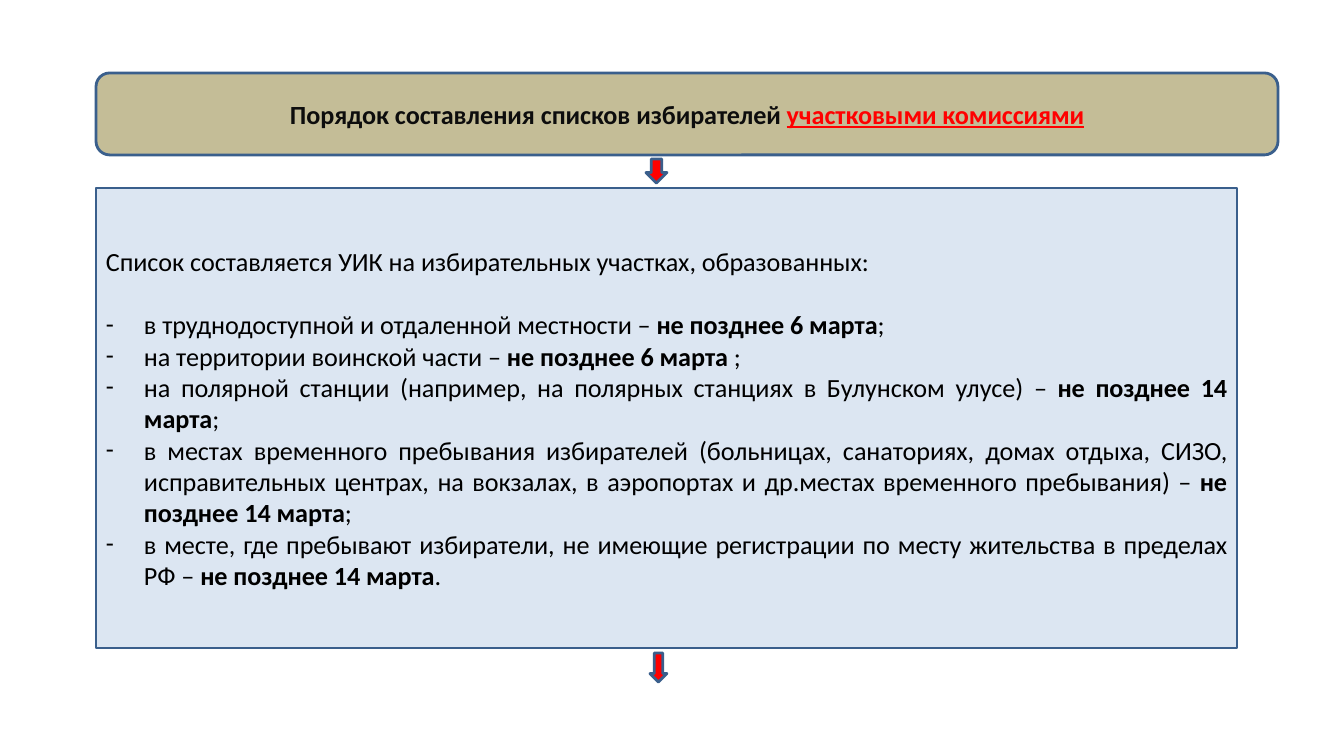
from dataclasses import dataclass
from lxml.etree import SubElement
from pptx import Presentation
from pptx.dml.color import RGBColor as Rgb
from pptx.enum.shapes import MSO_SHAPE as Shape
from pptx.enum.text import MSO_ANCHOR as Anchor, MSO_AUTO_SIZE as Fit, PP_ALIGN as Align
from pptx.oxml.ns import qn
from pptx.util import Pt

SCALE = 914400 / 100.8


def px(*nums):
    return [round(n * SCALE) for n in nums]


@dataclass(frozen=True)
class Theme:
    font: str = "Calibri"
    size: float = 18.67
    edge: float = 2
    gap: float = 23
    line: str = "3A5F8C"
    head: str = "C4BD97"
    body: str = "DCE6F2"
    red: str = "FF0000"
    dark: str = "0D0D0D"
    black: str = "000000"


class Board:
    def __init__(self, slide, theme):
        self.slide = slide
        self.theme = theme

    def box(self, kind, place, fill):
        shape = self.slide.shapes.add_shape(kind, *px(*place))
        shape.shadow.inherit = False
        shape.fill.solid()
        shape.fill.fore_color.rgb = Rgb.from_string(fill)
        shape.line.color.rgb = Rgb.from_string(self.theme.line)
        shape.line.width = Pt(self.theme.edge)
        return shape

    def text(self, para, words, color=None, bold=False, under=False):
        run = para.add_run()
        run.text = words
        font = run.font
        font.name, font.size = self.theme.font, Pt(self.theme.size)
        font.bold, font.underline = bold, under
        font.color.rgb = Rgb.from_string(color or self.theme.black)

    def dash(self, para, indent):
        """Turn a paragraph into a hanging item marked with a hyphen."""
        props = para._p.get_or_add_pPr()
        props.set("marL", str(indent))
        props.set("indent", str(-indent))
        SubElement(props, qn("a:buFont"), typeface=self.theme.font)
        SubElement(props, qn("a:buChar"), char="-")

    def title(self, place, plain, marked):
        self.box(Shape.ROUNDED_RECTANGLE, place, self.theme.head)
        title = self.slide.shapes.title
        title.left, title.top, title.width, title.height = px(*place)
        # Keep the heading above its panel.
        self.slide.shapes._spTree.append(title._element)
        frame = title.text_frame
        frame.word_wrap, frame.auto_size = True, Fit.NONE
        frame.vertical_anchor = Anchor.MIDDLE
        para = frame.paragraphs[0]
        para.alignment = Align.CENTER
        self.text(para, plain, color=self.theme.dark, bold=True)
        self.text(para, marked, color=self.theme.red, bold=True, under=True)

    def panel(self, place, intro, items):
        frame = self.box(Shape.RECTANGLE, place, self.theme.body).text_frame
        frame.word_wrap, frame.vertical_anchor = True, Anchor.MIDDLE
        para = frame.paragraphs[0]
        para.alignment = Align.JUSTIFY
        para.space_after = Pt(self.theme.gap)
        self.text(para, intro)
        indent, = px(38)
        for where, due, end in items:
            para = frame.add_paragraph()
            para.alignment = Align.JUSTIFY
            self.dash(para, indent)
            self.text(para, where + " – ")
            self.text(para, due, bold=True)
            self.text(para, end)

    def arrow(self, *place):
        self.box(Shape.DOWN_ARROW, place, self.theme.red)


INTRO = "Список составляется УИК на избирательных участках, образованных:"
EARLY, LATE = "не позднее 6 марта", "не позднее 14 марта"
ITEMS = [
    ("в труднодоступной и отдаленной местности", EARLY, ";"),
    ("на территории воинской части", EARLY + " ", ";"),
    ("на полярной станции (например, на полярных станциях в Булунском улусе)", LATE, ";"),
    ("в местах временного пребывания избирателей (больницах, санаториях, домах отдыха, "
     "СИЗО, исправительных центрах, на вокзалах, в аэропортах и др.местах "
     "временного пребывания)", LATE, ";"),
    ("в месте, где пребывают избиратели, не имеющие регистрации по месту жительства "
     "в пределах РФ", LATE, "."),
]


def main():
    deck = Presentation()
    deck.slide_width, deck.slide_height = px(1344, 756)
    board = Board(deck.slides.add_slide(deck.slide_layouts[5]), Theme())
    board.title((96, 73, 1182, 82), "Порядок составления списков избирателей ",
                "участковыми комиссиями")
    board.panel((96, 188, 1141, 460), INTRO, ITEMS)
    board.arrow(646, 159, 21, 24)
    board.arrow(650, 653, 17, 29)
    deck.save("out.pptx")


if __name__ == "__main__":
    main()
